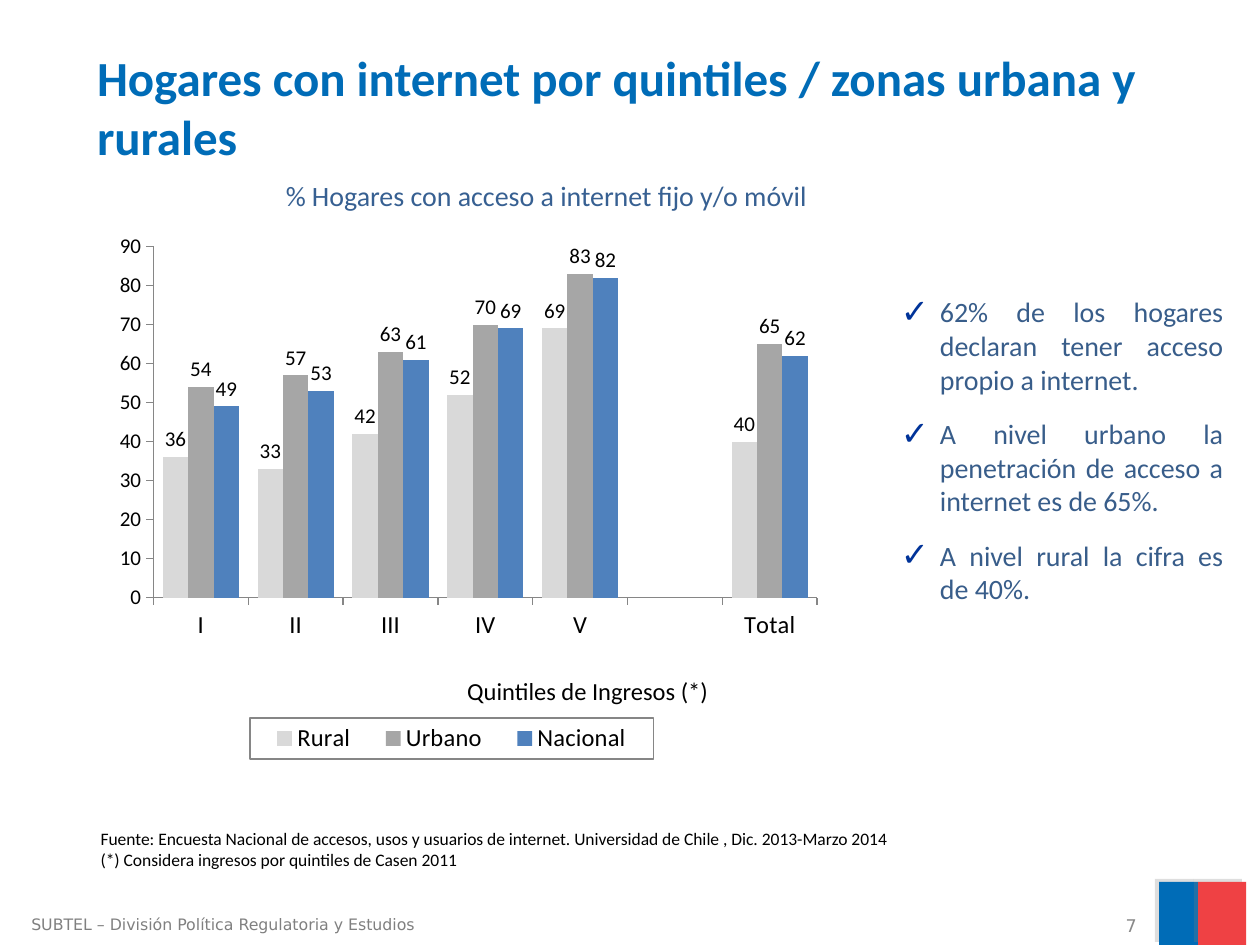
from dataclasses import dataclass

import lxml.etree
import pptx
import pptx.chart.data
import pptx.dml.color
import pptx.enum.chart
import pptx.enum.shapes
import pptx.enum.text
import pptx.oxml
import pptx.oxml.ns
import pptx.util
from pptx.util import Inches, Pt

Align = pptx.enum.text.PP_ALIGN
Anchor = pptx.enum.text.MSO_ANCHOR
qn = pptx.oxml.ns.qn


@dataclass(frozen=True)
class Theme:
    font: str = "Calibri"
    footer_font: str = "DejaVu Sans"
    blue: str = "006CB7"
    red: str = "EF4144"
    black: str = "000000"
    subtitle: str = "376092"
    body: str = "385D8A"
    bullet: str = "003399"
    axis: str = "868686"
    footer: str = "808080"
    page_number: str = "898989"
    title_size: float = 28
    body_size: float = 16
    label_size: float = 14
    value_size: float = 12
    note_size: float = 10
    footer_size: float = 9


THEME = Theme()


@dataclass(frozen=True)
class Area:
    left: float
    top: float
    width: float
    height: float


@dataclass(frozen=True)
class Style:
    size: float
    color: str
    font: str = THEME.font
    bold: bool = False


@dataclass(frozen=True)
class Label:
    area: Area
    lines: tuple[str, ...]
    style: Style
    align: Align = Align.LEFT
    anchor: Anchor = Anchor.TOP
    wrap: bool = True


@dataclass(frozen=True)
class Bar:
    area: Area
    color: str


@dataclass(frozen=True)
class Zone:
    name: str
    color: str
    values: tuple


TITLE = Label(Area(0.67, 0.33, 8.78, 0.97),
              ("Hogares con internet por quintiles / zonas urbana y rurales",),
              Style(THEME.title_size, THEME.blue, bold=True))
FINDINGS = Label(Area(7.05, 2.29, 2.76, 2.59),
                 ("62% de los hogares declaran tener acceso propio a internet.",
                  "A nivel urbano la penetración de acceso a internet es de 65%.",
                  "A nivel rural la cifra es de 40%."),
                 Style(THEME.body_size, THEME.body), Align.JUSTIFY)
LABELS = (
    Label(Area(3.61, 5.32, 2.13, 0.34), ("Quintiles de Ingresos (*)",),
          Style(THEME.label_size, THEME.black), wrap=False),
    Label(Area(2.17, 1.37, 6, 0.37), ("% Hogares con acceso a internet fijo y/o móvil",),
          Style(THEME.body_size, THEME.subtitle)),
    Label(Area(0.7, 6.52, 7.66, 0.44),
          ("Fuente: Encuesta Nacional de accesos, usos y usuarios de internet. "
           "Universidad de Chile , Dic. 2013-Marzo 2014",
           "(*) Considera ingresos por quintiles de Casen 2011"),
          Style(THEME.note_size, THEME.black)),
    Label(Area(6.79, 7.24, 2.33, 0.21), ("7",),
          Style(THEME.note_size, THEME.page_number, THEME.footer_font),
          Align.RIGHT, Anchor.MIDDLE),
    Label(Area(0.15, 7.21, 5.33, 0.25), ("SUBTEL – División Política Regulatoria y Estudios",),
          Style(THEME.footer_size, THEME.footer, THEME.footer_font)),
)
BARS = (Bar(Area(9.2, 7, 0.31, 0.5), THEME.blue), Bar(Area(9.51, 7, 0.38, 0.5), THEME.red))
QUINTILES = ("I", "II", "III", "IV", "V", "", "Total")
ZONES = (
    Zone("Rural", "D9D9D9", (36, 33, 42, 52, 69, None, 40)),
    Zone("Urbano", "A6A6A6", (54, 57, 63, 70, 83, None, 65)),
    Zone("Nacional", "4F81BD", (49, 53, 61, 69, 82, None, 62)),
)
CHART_AREA = Area(0.42, 1.76, 6.71, 4.59)
PLOT_FRACTIONS = Area(0.119, 0.043, 0.785, 0.607)
LEGEND_FRACTIONS = Area(0.233, 0.858, 0.477, 0.071)


def rgb(color: str) -> pptx.dml.color.RGBColor:
    return pptx.dml.color.RGBColor.from_string(color)


def lengths(area: Area) -> tuple:
    return tuple(Inches(n) for n in (area.left, area.top, area.width, area.height))


def assign(target, formats: dict) -> None:
    for name, value in formats.items():
        setattr(target, name, value)


def set_font(font, style: Style) -> None:
    assign(font, {"name": style.font, "size": Pt(style.size), "bold": style.bold})
    font.color.rgb = rgb(style.color)


def write(box, label: Label) -> None:
    frame = box.text_frame
    assign(frame, {"text": "\n".join(label.lines), "word_wrap": label.wrap,
                   "vertical_anchor": label.anchor,
                   "auto_size": pptx.enum.text.MSO_AUTO_SIZE.NONE})
    for para in frame.paragraphs:
        assign(para, {"alignment": label.align, "space_before": Pt(0)})
        for span in para.runs:
            set_font(span.font, label.style)


def fill_placeholder(box, label: Label) -> None:
    assign(box, dict(zip(("left", "top", "width", "height"), lengths(label.area))))
    write(box, label)


def add_check_marks(box) -> None:
    for para in box.text_frame.paragraphs:
        properties = para._p.get_or_add_pPr()
        properties.set("marL", str(Inches(0.31)))
        properties.set("indent", str(-Inches(0.31)))
        color = lxml.etree.SubElement(properties, qn("a:buClr"))
        lxml.etree.SubElement(color, qn("a:srgbClr"), val=THEME.bullet)
        lxml.etree.SubElement(properties, qn("a:buSzPct"), val="120000")
        lxml.etree.SubElement(properties, qn("a:buChar"), char="✓")
        para.space_after = Pt(12)


def add_bar(page, bar: Bar) -> None:
    shape = page.shapes.add_shape(pptx.enum.shapes.MSO_SHAPE.RECTANGLE, *lengths(bar.area))
    shape.fill.solid()
    shape.fill.fore_color.rgb = rgb(bar.color)
    shape.line.fill.background()
    shape.shadow.inherit = False
    effects = shape._element.spPr.find(qn("a:effectLst"))
    shadow = lxml.etree.SubElement(effects, qn("a:outerShdw"), blurRad="0",
                                   dist=str(Pt(3)), dir=str(215 * 60000))
    color = lxml.etree.SubElement(shadow, qn("a:srgbClr"), val="808080")
    lxml.etree.SubElement(color, qn("a:alpha"), val="25000")


def place(part, fractions: Area, index: int, inner: bool = False) -> None:
    """Fix a chart part by fractions of the chart's size."""
    for old in part.findall(qn("c:layout")):
        part.remove(old)
    layout = pptx.oxml.parse_xml(f'<c:layout {pptx.oxml.ns.nsdecls("c")}/>')
    part.insert(index, layout)
    manual = lxml.etree.SubElement(layout, qn("c:manualLayout"))
    values = {"layoutTarget": "inner"} if inner else {}
    values |= {"xMode": "edge", "yMode": "edge", "x": fractions.left, "y": fractions.top,
               "w": fractions.width, "h": fractions.height}
    for name, value in values.items():
        lxml.etree.SubElement(manual, qn(f"c:{name}"), val=str(value))


def add_legend(chart) -> None:
    chart.has_legend = True
    assign(chart.legend, {"position": pptx.enum.chart.XL_LEGEND_POSITION.RIGHT,
                          "include_in_layout": False})
    set_font(chart.legend.font, Style(THEME.label_size, THEME.black))
    legend = chart.element.xpath(".//c:legend")[0]
    place(legend, LEGEND_FRACTIONS, 1)
    legend.find(qn("c:overlay")).addnext(pptx.oxml.parse_xml(
        f'<c:spPr {pptx.oxml.ns.nsdecls("c", "a")}><a:ln w="9525"><a:solidFill>'
        f'<a:srgbClr val="{THEME.axis}"/></a:solidFill></a:ln></c:spPr>'))


def add_household_chart(page) -> None:
    data = pptx.chart.data.CategoryChartData()
    data.categories = QUINTILES
    for zone in ZONES:
        data.add_series(zone.name, zone.values)
    chart = page.shapes.add_chart(pptx.enum.chart.XL_CHART_TYPE.COLUMN_CLUSTERED,
                                  *lengths(CHART_AREA), data).chart
    chart.has_title = False
    set_font(chart.font, Style(18, THEME.black))
    plot = chart.plots[0]
    assign(plot, {"gap_width": 73, "overlap": 0, "vary_by_categories": False})
    for series, zone in zip(plot.series, ZONES):
        series.format.fill.solid()
        series.format.fill.fore_color.rgb = rgb(zone.color)
        assign(series.data_labels, {
            "show_value": True, "position": pptx.enum.chart.XL_LABEL_POSITION.OUTSIDE_END})
        set_font(series.data_labels.font, Style(THEME.value_size, THEME.black))
    for axis, size in ((chart.category_axis, THEME.label_size),
                       (chart.value_axis, THEME.value_size)):
        assign(axis, {"has_major_gridlines": False,
                      "major_tick_mark": pptx.enum.chart.XL_TICK_MARK.OUTSIDE})
        set_font(axis.tick_labels.font, Style(size, THEME.black))
        axis.format.line.color.rgb = rgb(THEME.axis)
    assign(chart.value_axis, {"minimum_scale": 0, "maximum_scale": 90, "major_unit": 10})
    place(chart.element.xpath(".//c:plotArea")[0], PLOT_FRACTIONS, 0, inner=True)
    add_legend(chart)


def main() -> None:
    deck = pptx.Presentation()
    assign(deck, {"slide_width": Inches(10), "slide_height": Inches(7.5)})
    page = deck.slides.add_slide(deck.slide_layouts[1])
    title, body = page.placeholders
    fill_placeholder(title, TITLE)
    fill_placeholder(body, FINDINGS)
    add_check_marks(body)
    for bar in BARS:
        add_bar(page, bar)
    add_household_chart(page)
    for label in LABELS:
        write(page.shapes.add_textbox(*lengths(label.area)), label)
    deck.save("out.pptx")


if __name__ == "__main__":
    main()
